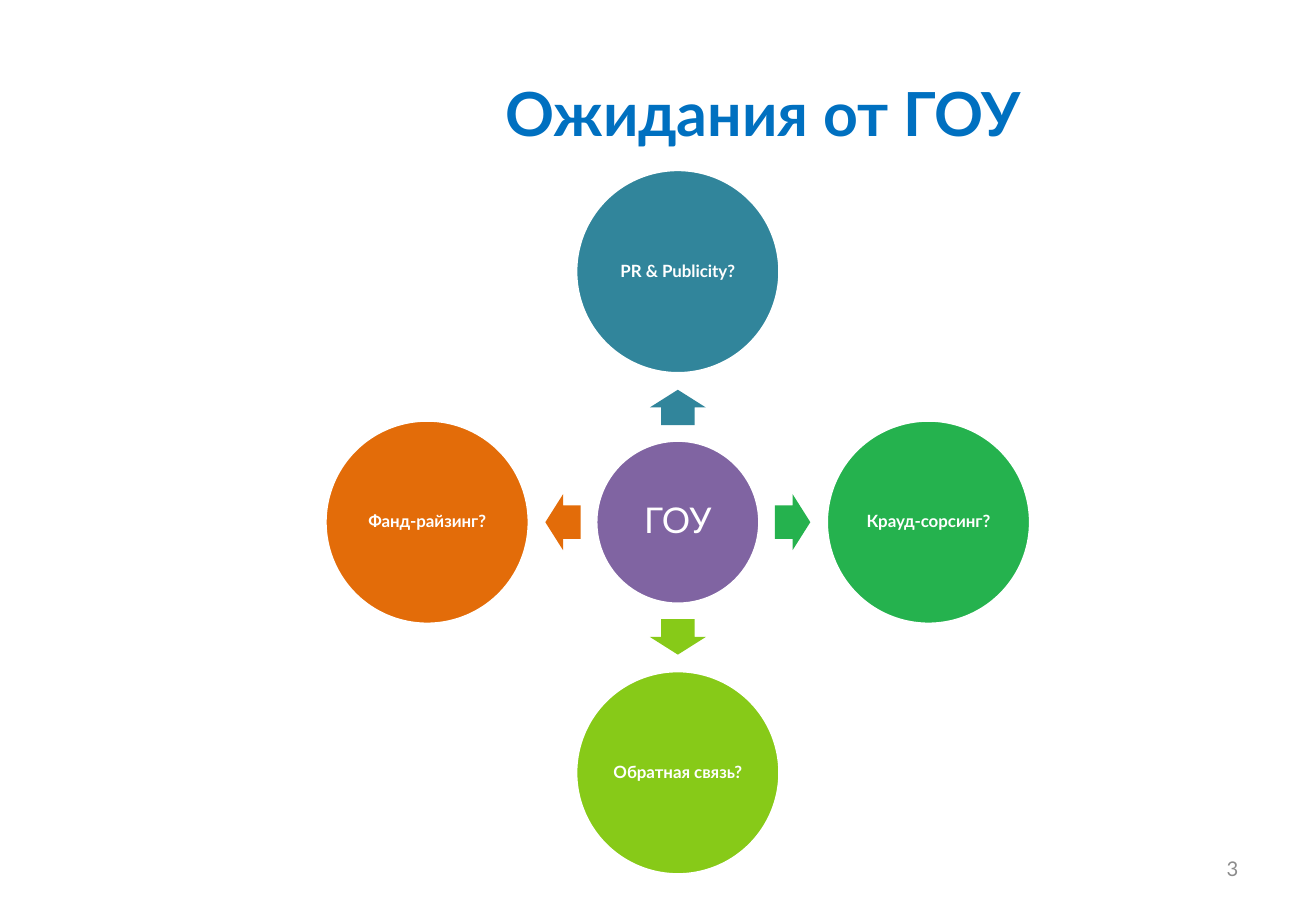
import math
from dataclasses import dataclass

from pptx import Presentation, util as u
from pptx.dml.color import RGBColor
from pptx.enum import shapes, text


@dataclass(frozen=True)
class Theme:
    font: str = "Lato"
    title: str = "0070C0"
    white: str = "FFFFFF"
    grey: str = "8C8C8C"
    core: str = "8064A2"
    teal: str = "31859B"
    green: str = "25B24E"
    lime: str = "87CA18"
    orange: str = "E36C09"
    big: int = 36
    mid: int = 21
    small: int = 10
    page: int = 12


THEME = Theme()
MID_X, MID_Y = 14.17, 10.92
CORE, BALL = 3.43, 4.27
REACH, STEP = 5.24, 2.4
ARROW = (0.74, 1.17)
ASPECTS = [
    ("PR & Publicity?", THEME.teal, 270),
    ("Крауд-сорсинг?", THEME.green, 0),
    ("Обратная связь?", THEME.lime, 90),
    ("Фанд-райзинг?", THEME.orange, 180),
]


def write(shape, words, size, color, bold=False, align="CENTER",
          inset=None, space=None):
    frame = shape.text_frame
    frame.word_wrap = True
    frame.vertical_anchor = text.MSO_ANCHOR.MIDDLE
    if inset is not None:
        frame.margin_left = frame.margin_right = u.Cm(inset)
        frame.margin_top = frame.margin_bottom = u.Cm(inset)
    para = frame.paragraphs[0]
    para.alignment = getattr(text.PP_ALIGN, align)
    if space:
        para.line_spacing = space
    run = para.add_run()
    run.text = words
    run.font.name = THEME.font
    run.font.size = u.Pt(size)
    run.font.bold = bold
    run.font.color.rgb = RGBColor.from_string(color)


def add_box(slide, left, top, width, height):
    return slide.shapes.add_textbox(*map(u.Cm, (left, top, width, height)))


def add_form(slide, kind, x, y, width, height, color):
    form = slide.shapes.add_shape(
        kind, u.Cm(x - width / 2), u.Cm(y - height / 2),
        u.Cm(width), u.Cm(height))
    form.shadow.inherit = False
    form.fill.solid()
    form.fill.fore_color.rgb = RGBColor.from_string(color)
    form.line.fill.background()
    return form


def add_ball(slide, x, y, size, color, words, points, bold, inset):
    ball = add_form(slide, shapes.MSO_SHAPE.OVAL, x, y, size, size, color)
    ball.line.color.rgb = RGBColor.from_string(THEME.white)
    ball.line.width = u.Pt(2)
    write(ball, words, points, THEME.white, bold=bold, inset=inset, space=0.9)


def add_arrow(slide, x, y, color, turn):
    arrow = add_form(slide, shapes.MSO_SHAPE.RIGHT_ARROW, x, y, *ARROW, color)
    arrow.adjustments[0] = 0.6
    arrow.adjustments[1] = 0.5
    arrow.rotation = turn


def main():
    deck = Presentation()
    deck.slide_width, deck.slide_height = u.Cm(27.51), u.Cm(19.05)
    slide = deck.slides.add_slide(deck.slide_layouts[6])

    write(add_box(slide, 5.77, 0.76, 20.37, 3.18), "Ожидания от ГОУ",
          THEME.big, THEME.title, bold=True)
    add_ball(slide, MID_X, MID_Y, CORE, THEME.core, "ГОУ",
             THEME.mid, False, 0.08)
    for words, color, turn in ASPECTS:
        dx, dy = math.cos(math.radians(turn)), math.sin(math.radians(turn))
        add_arrow(slide, MID_X + STEP * dx, MID_Y + STEP * dy, color, turn)
        add_ball(slide, MID_X + REACH * dx, MID_Y + REACH * dy, BALL, color,
                 words, THEME.small, True, 0.03)
    write(add_box(slide, 19.71, 17.65, 6.43, 1.02), "3",
          THEME.page, THEME.grey, align="RIGHT")
    deck.save("out.pptx")


if __name__ == "__main__":
    main()
